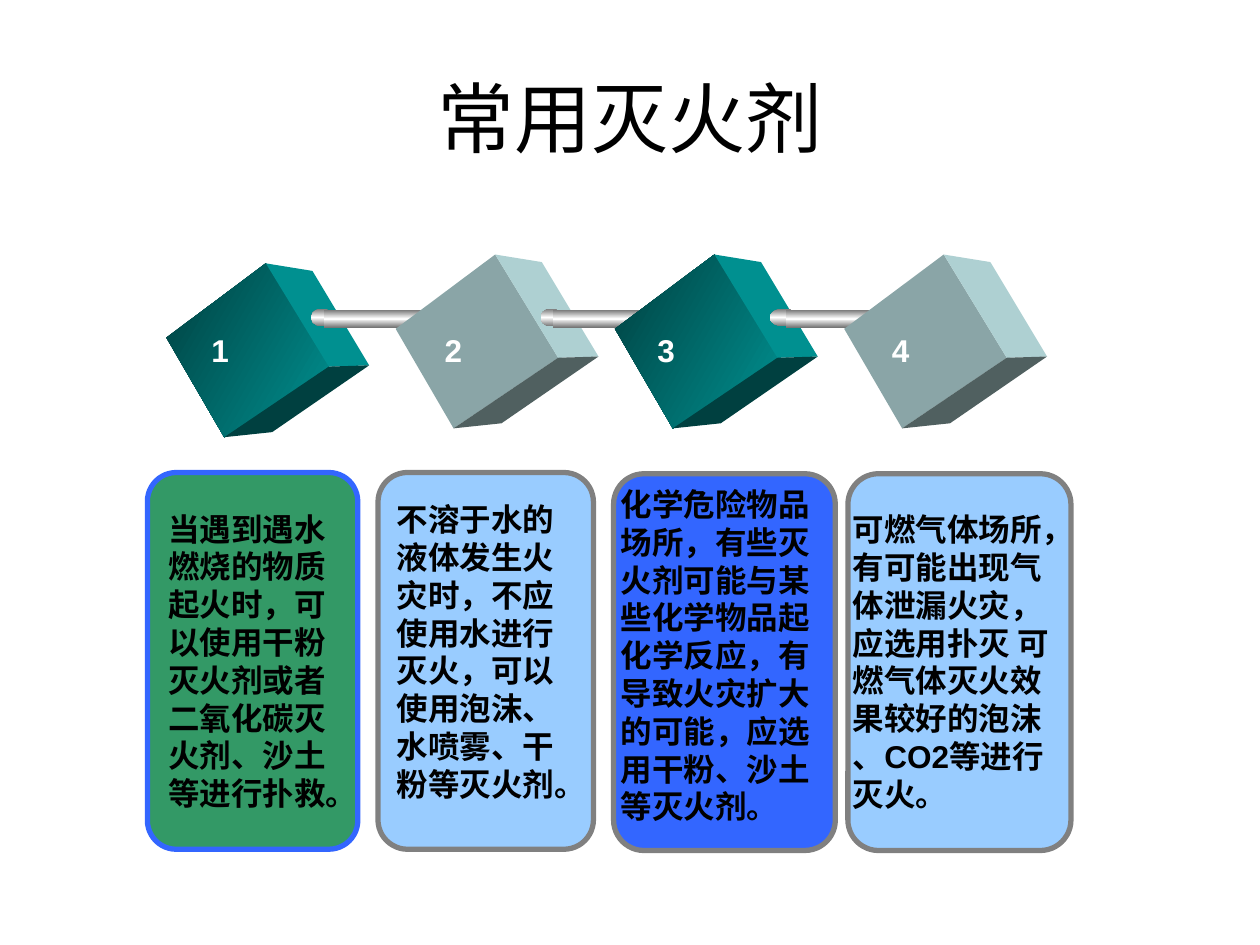
import copy

import pptx
import pptx.dml.color
import pptx.enum.shapes
import pptx.enum.text
import pptx.util

Inches = pptx.util.Inches
RGBColor = pptx.dml.color.RGBColor
KIND = pptx.enum.shapes.MSO_SHAPE
ALIGN = pptx.enum.text.PP_ALIGN
ANCHOR = pptx.enum.text.MSO_ANCHOR

BLACK = RGBColor(0x00, 0x00, 0x00)
WHITE = RGBColor(0xFF, 0xFF, 0xFF)
GRAY = RGBColor(0x80, 0x80, 0x80)
STEEL = RGBColor(0x76, 0x76, 0x76)
SKY = RGBColor(0x99, 0xCC, 0xFF)
BLUE = RGBColor(0x33, 0x66, 0xFF)
GREEN = RGBColor(0x33, 0x99, 0x66)
TEAL = RGBColor(0x00, 0x90, 0x90)
DEEP = RGBColor(0x00, 0x40, 0x40)
MIST = RGBColor(0x8A, 0xA5, 0xA7)
PALE = RGBColor(0xAE, 0xD0, 0xD2)
SLATE = RGBColor(0x50, 0x60, 0x60)

FACES = (
    ((0, 0), (0.79, -0.59), (1.29, 0.23), (0.46, 0.79)),
    ((0.79, -0.59), (1.16, -0.53), (1.61, 0.22), (1.29, 0.23)),
    ((1.29, 0.23), (1.61, 0.22), (0.84, 0.75), (0.46, 0.79)),
)
DARK = ((DEEP, TEAL), (TEAL,), (DEEP,))
LIGHT = ((MIST,), (PALE,), (SLATE,))

CUBES = (
    (1.32, 2.68, DARK, 1.58),
    (3.14, 2.61, LIGHT, 3.43),
    (4.88, 2.61, DARK, 5.12),
    (6.70, 2.61, LIGHT, 6.98),
)
RODS = ((2.47, 0.17, 0.82), (4.29, 0.17, 0.82), (6.11, 0.22, 1.07))
CARDS = (
    (6.73, 3.76, 1.77, SKY, GRAY),
    (4.87, 3.76, 1.76, BLUE, GRAY),
    (3.00, 3.75, 1.71, SKY, GRAY),
    (1.17, 3.75, 1.67, GREEN, BLUE),
)
WATER = ("当遇到遇水", "燃烧的物质", "起火时，可", "以使用干粉",
         "灭火剂或者", "二氧化碳灭", "火剂、沙土", "等进行扑救。")
NOTES = (
    ((3.05, 3.92, 1.6, 2.52), True,
     ("不溶于水的", "液体发生火", "灾时，不应", "使用水进行",
      "灭火，可以使用泡沫、水喷雾、干粉等灭火剂。")),
    ((4.83, 3.8, 1.85, 3.13), True,
     ("化学危险物品", "场所，有些灭", "火剂可能与某", "些化学物品起",
      "化学反应，有", "导致火灾扩大", "的可能，应选", "用干粉、沙土",
      "等灭火剂。")),
    ((6.67, 4, 1.95, 2.52), False,
     ("可燃气体场所，", "有可能出现气", "体泄漏火灾，", "应选用扑灭 可",
      "燃气体灭火效", "果较好的泡沫", "、CO2等进行", "灭火。")),
)


class Deck:
    """Holds the text style and the current slide, and draws each kind of element."""

    def __init__(self, slide):
        self.slide = slide
        self.style = {"name": "Arial", "size": pptx.util.Pt(18), "bold": True}

    def paint(self, shape, tones, angle=0):
        shape.shadow.inherit = False
        shape.line.fill.background()
        if len(tones) == 1:
            shape.fill.solid()
            shape.fill.fore_color.rgb = tones[0]
            return
        shape.fill.gradient()
        shape.fill.gradient_angle = angle
        stops = shape._element.spPr.xpath(".//a:gsLst")[0]
        for _ in tones[2:]:
            stops.append(copy.deepcopy(stops[0]))
        for i, (stop, tone) in enumerate(zip(shape.fill.gradient_stops, tones)):
            stop.color.rgb = tone
            stop.position = i / (len(tones) - 1)

    def shape(self, kind, spot, tones, angle=0):
        shape = self.slide.shapes.add_shape(kind, *map(Inches, spot))
        self.paint(shape, tones, angle)
        return shape

    def card(self, left, top, width, tone, edge):
        card = self.shape(KIND.ROUNDED_RECTANGLE, (left, top, width, 2.99), (tone,))
        card.adjustments[0] = 0.137
        card.line.color.rgb = edge
        card.line.width = pptx.util.Pt(3)
        return card

    def cube(self, left, top, sides):
        for face, tones in zip(FACES, sides):
            spots = [(Inches(left + x), Inches(top + y)) for x, y in face]
            form = self.slide.shapes.build_freeform(*spots[0])
            form.add_line_segments(spots[1:])
            self.paint(form.convert_to_shape(), tones, 330)

    def rod(self, left, cap, width):
        tones = (STEEL, WHITE, STEEL)
        self.shape(KIND.OVAL, (left, 2.45, cap, 0.14), tones, 270)
        self.shape(KIND.RECTANGLE, (left + 0.58 * cap, 2.46, width, 0.14), tones, 270)

    def label(self, shape, lines, tone=BLACK, wrap=False,
              anchor=ANCHOR.TOP, align=ALIGN.LEFT, **extra):
        frame = shape.text_frame
        frame.word_wrap = wrap
        frame.vertical_anchor = anchor
        frame.text = "\n".join(lines)
        for para in frame.paragraphs:
            para.alignment = align
            for key, value in {**self.style, **extra}.items():
                setattr(para.font, key, value)
            para.font.color.rgb = tone

    def text(self, spot, lines, **form):
        box = self.slide.shapes.add_textbox(*map(Inches, spot))
        self.label(box, lines, **form)


def main():
    show = pptx.Presentation()
    show.slide_width, show.slide_height = Inches(10), Inches(7.5)
    deck = Deck(show.slides.add_slide(show.slide_layouts[6]))
    deck.text((0.5, 0.3, 9, 1.25), ["常用灭火剂"], wrap=True, anchor=ANCHOR.MIDDLE,
              align=ALIGN.CENTER, size=pptx.util.Pt(44), bold=False)
    cards = [deck.card(*card) for card in CARDS]
    deck.label(cards[-1], WATER, anchor=ANCHOR.MIDDLE)
    for i, (left, top, sides, _) in enumerate(CUBES):
        deck.cube(left, top, sides)
        if i < len(RODS):
            deck.rod(*RODS[i])
    for i, cube in enumerate(CUBES, 1):
        deck.text((cube[-1], 2.58, 0.34, 0.4), [str(i)], tone=WHITE)
    for spot, wrap, lines in NOTES:
        deck.text(spot, lines, wrap=wrap)
    show.save("out.pptx")


if __name__ == "__main__":
    main()
